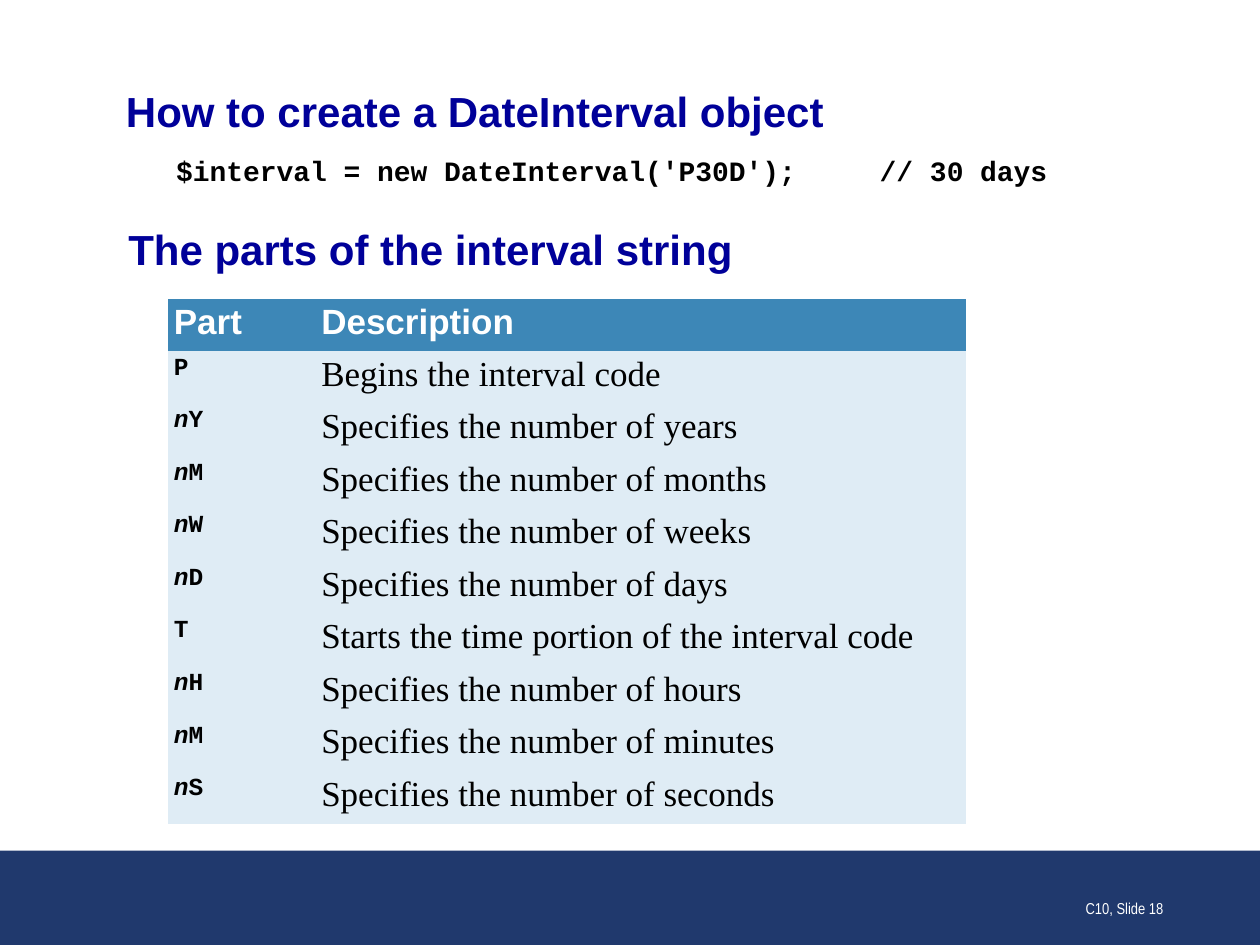
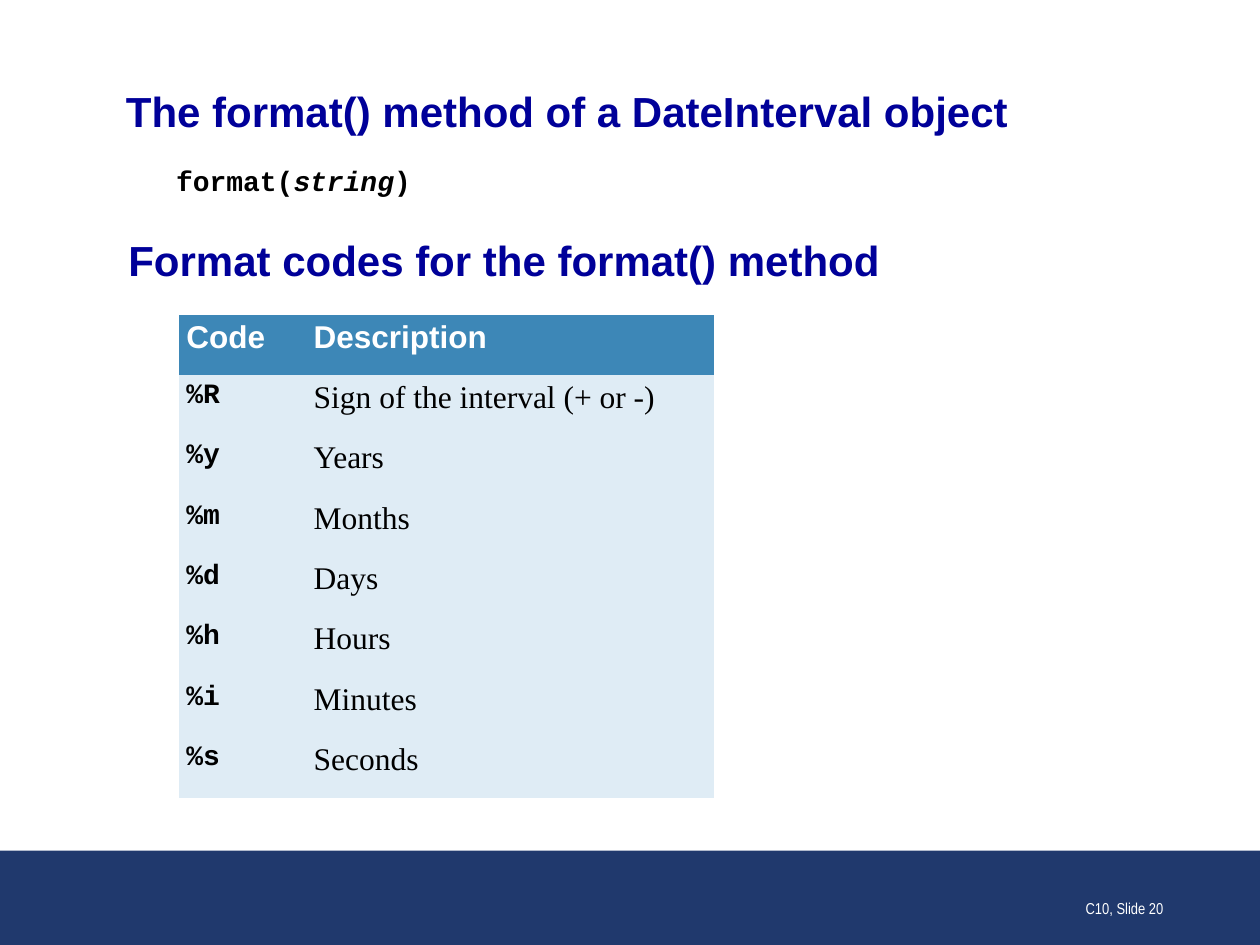
"""Builds two slides on PHP DateInterval objects."""
from pptx import Presentation
from pptx import util as u
from pptx.dml.color import RGBColor
from pptx.enum import shapes, text as t

HUES = {"band": "20396D", "title": "000099", "head": "3D87B7",
        "row": "DFECF5", "ink": "000000", "white": "FFFFFF"}
PLAIN = "{2D5ABB26-0587-4C30-8999-92F81FD0307C}"
SANS, MONO, SERIF = "Arial", "Courier New", "Times New Roman"

SLIDES = [
    {
        "title": "How to create a DateInterval object",
        "code": "$interval = new DateInterval('P30D');     // 30 days",
        "sub": "The parts of the interval string",
        "foot": "C10, Slide 18",
        "top": 1.17,
        "box": (1.33, 2.37, 4.17), "cols": (1.17, 5.17),
        "pads": (0.05, 0.03), "sizes": (14, 20),
        "rows": [
            ("Part", "Description"),
            ("P", "Begins the interval code"),
            ("*n*Y", "Specifies the number of years"),
            ("*n*M", "Specifies the number of months"),
            ("*n*W", "Specifies the number of weeks"),
            ("*n*D", "Specifies the number of days"),
            ("T", "Starts the time portion of the interval code"),
            ("*n*H", "Specifies the number of hours"),
            ("*n*M", "Specifies the number of minutes"),
            ("*n*S", "Specifies the number of seconds"),
        ],
    },
    {
        "title": "The format() method of a DateInterval object",
        "code": "format(*string*)",
        "sub": "Format codes for the format() method",
        "foot": "C10, Slide 20",
        "top": 1.25,
        "box": (1.42, 2.5, 3.83), "cols": (1.01, 3.24),
        "pads": (0.06, 0.04), "sizes": (16, 18),
        "rows": [
            ("Code", "Description"),
            ("%R", "Sign of the interval (+ or -)"),
            ("%y", "Years"),
            ("%m", "Months"),
            ("%d", "Days"),
            ("%h", "Hours"),
            ("%i", "Minutes"),
            ("%s", "Seconds"),
        ],
    },
]


def write(para, words, size=24, font=SANS, hue="title", bold=True,
          align=t.PP_ALIGN.LEFT, before=0, after=0):
    """Fill a paragraph; words between asterisks are italic."""
    para.alignment = align
    para.space_before, para.space_after = u.Pt(before), u.Pt(after)
    for i, part in enumerate(words.split("*")):
        if part:
            run = para.add_run()
            run.text = part
            face = run.font
            face.name, face.size = font, u.Pt(size)
            face.bold, face.italic = bold, i % 2 == 1
            face.color.rgb = RGBColor.from_string(HUES[hue])


def paint(item, hue):
    """Give a shape or a cell a solid fill."""
    item.fill.solid()
    item.fill.fore_color.rgb = RGBColor.from_string(HUES[hue])


def frame(slide, box, anchor=t.MSO_ANCHOR.TOP):
    """Add a wrapping text box and return its text frame."""
    body = slide.shapes.add_textbox(*map(u.Inches, box)).text_frame
    body.word_wrap, body.vertical_anchor = True, anchor
    return body


def base(slide, title, foot):
    """Add the band, title and footer that all slides share."""
    band = slide.shapes.add_shape(
        shapes.MSO_SHAPE.RECTANGLE, *map(u.Inches, (0, 6.75, 10, 0.75)))
    band.shadow.inherit = False
    band.line.fill.background()
    paint(band, "band")
    head = frame(slide, (1, 0.68, 8, 0.4), t.MSO_ANCHOR.MIDDLE)
    head.margin_left = head.margin_right = 0
    head.margin_top = head.margin_bottom = 0
    write(head.paragraphs[0], title)
    note = frame(slide, (7.25, 6.83, 2.08, 0.5), t.MSO_ANCHOR.BOTTOM)
    write(note.paragraphs[0], foot, size=9, font="Arial Narrow",
          hue="white", bold=False, align=t.PP_ALIGN.RIGHT)


def grid(slide, rows, box, cols, pads, sizes):
    """Add the table with a header row and code in the first column."""
    left, top, high = box
    table = slide.shapes.add_table(
        len(rows), len(cols),
        *map(u.Inches, (left, top, sum(cols), high))).table
    table._tbl.tblPr[0].text = PLAIN
    for col, wide in zip(table.columns, cols):
        col.width = u.Inches(wide)
    side, edge = map(u.Inches, pads)
    small, big = sizes
    looks = [dict(size=small, font=MONO, hue="ink"),
             dict(size=big, font=SERIF, hue="ink", bold=False)]
    for r, row in enumerate(rows):
        table.rows[r].height = u.Inches(high / len(rows))
        for c, words in enumerate(row):
            cell = table.cell(r, c)
            cell.margin_left = cell.margin_right = side
            cell.margin_top = cell.margin_bottom = edge
            paint(cell, "row" if r else "head")
            look = looks[c] if r else dict(size=big, hue="white")
            write(cell.text_frame.paragraphs[0], words, **look)


def main():
    """Build and save the deck."""
    deck = Presentation()
    deck.slide_width, deck.slide_height = u.Inches(10), u.Inches(7.5)
    for data in SLIDES:
        slide = deck.slides.add_slide(deck.slide_layouts[6])
        base(slide, data["title"], data["foot"])
        grid(slide, *(data[k] for k in ("rows", "box", "cols", "pads", "sizes")))
        body = frame(slide, (0.92, data["top"], 8.08, 2.42))
        code = body.paragraphs[0]
        code._p.get_or_add_pPr().set("marL", str(u.Inches(0.38)))
        write(code, data["code"], size=16, font=MONO, hue="ink", after=6)
        write(body.add_paragraph(), data["sub"], before=15, after=6)
    deck.save("out.pptx")


if __name__ == "__main__":
    main()
